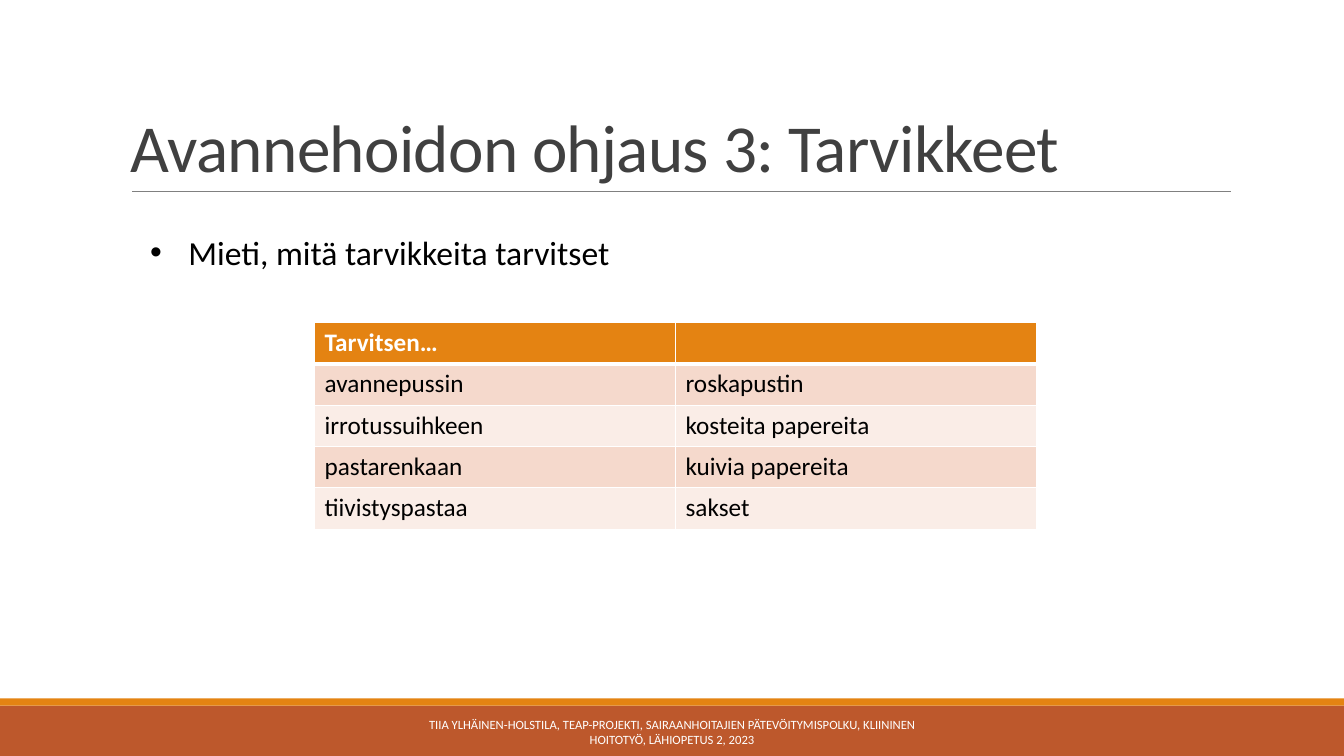
import pptx
import pptx.dml.color
import pptx.enum.shapes
import pptx.enum.text
import pptx.oxml
import pptx.oxml.ns
import pptx.util
from lxml import etree
from pptx.util import Inches

TITLE = "Avannehoidon ohjaus 3: Tarvikkeet"
PROMPT = "Mieti, mitä tarvikkeita tarvitset"
SUPPLIES = [
    ("Tarvitsen…", ""),
    ("avannepussin", "roskapustin"),
    ("irrotussuihkeen", "kosteita papereita"),
    ("pastarenkaan", "kuivia papereita"),
    ("tiivistyspastaa", "sakset"),
]
FOOTER = ("TIIA YLHÄINEN-HOLSTILA, TEAP-PROJEKTI, SAIRAANHOITAJIEN PÄTEVÖITYMISPOLKU, "
          "KLIININEN HOITOTYÖ, LÄHIOPETUS 2, 2023")

FONT = "Calibri"
COLORS = {
    "footer band": "BD582C", "accent": "E48312", "rule": "808080", "title": "404040",
    "body": "000000", "white": "FFFFFF", "odd row": "F5D9CC", "even row": "FAEDE7",
}
SLIDE_WIDTH, SLIDE_HEIGHT = 13.33, 7.5
BANDS = [("footer band", 7, 0.5), ("accent", 6.93, 0.07)]
TABLE_LEFT, TABLE_TOP, COLUMN_WIDTH, ROW_HEIGHT = 3.12, 3.2, 3.58, 0.41

ANCHOR = pptx.enum.text.MSO_ANCHOR
ALIGN = pptx.enum.text.PP_ALIGN


def color(name):
    return pptx.dml.color.RGBColor.from_string(COLORS[name])


def paint(target, name):
    target.fill.solid()
    target.fill.fore_color.rgb = color(name)


def write(paragraph, text, size, name, bold=False):
    paragraph.text = text
    paragraph.font.name = FONT
    paragraph.font.size = pptx.util.Pt(size)
    paragraph.font.bold = bold
    paragraph.font.color.rgb = color(name)


def add_text(slide, box, text, size, name, anchor=ANCHOR.TOP):
    frame = slide.shapes.add_textbox(*map(Inches, box)).text_frame
    frame.word_wrap = True
    frame.vertical_anchor = anchor
    paragraph = frame.paragraphs[0]
    write(paragraph, text, size, name)
    return paragraph


def add_borders(cell, bottom):
    properties = cell._tc.get_or_add_tcPr()
    for side, points in (("L", 1), ("R", 1), ("T", 1), ("B", bottom)):
        properties.append(pptx.oxml.parse_xml(
            f'<a:ln{side} {pptx.oxml.ns.nsdecls("a")} w="{pptx.util.Pt(points)}"><a:solidFill>'
            f'<a:srgbClr val="{COLORS["white"]}"/></a:solidFill></a:ln{side}>'))


def add_supplies(slide):
    columns = len(SUPPLIES[0])
    table = slide.shapes.add_table(
        len(SUPPLIES), columns, Inches(TABLE_LEFT), Inches(TABLE_TOP),
        Inches(COLUMN_WIDTH * columns), Inches(ROW_HEIGHT * len(SUPPLIES))).table
    for row, supplies in enumerate(SUPPLIES):
        header = row == 0
        fill = "accent" if header else "odd row" if row % 2 else "even row"
        for column, supply in enumerate(supplies):
            cell = table.cell(row, column)
            add_borders(cell, 3 if header else 1)
            paint(cell, fill)
            write(cell.text_frame.paragraphs[0], supply, 18,
                  "white" if header else "body", header)


def main():
    deck = pptx.Presentation()
    deck.slide_width, deck.slide_height = Inches(SLIDE_WIDTH), Inches(SLIDE_HEIGHT)
    slide = deck.slides.add_slide(deck.slide_layouts[6])

    for name, top, height in BANDS:
        band = slide.shapes.add_shape(
            pptx.enum.shapes.MSO_SHAPE.RECTANGLE,
            0, Inches(top), Inches(SLIDE_WIDTH), Inches(height))
        band.shadow.inherit = False
        paint(band, name)
        band.line.fill.background()

    rule = slide.shapes.add_connector(
        pptx.enum.shapes.MSO_CONNECTOR.STRAIGHT,
        Inches(1.31), Inches(1.9), Inches(12.21), Inches(1.9))
    rule.line.color.rgb = color("rule")
    rule.line.width = pptx.util.Pt(0.5)
    etree.SubElement(rule._element.spPr, pptx.oxml.ns.qn("a:effectLst"))

    title = add_text(slide, (1.2, 0.31, 11, 1.59), TITLE, 48, "title", ANCHOR.BOTTOM)
    title.line_spacing = 0.85
    title.runs[0].font._element.set("spc", "-50")

    prompt = add_text(slide, (1.39, 2.25, 9.29, 0.5), PROMPT, 24, "body")
    prompt.space_after = pptx.util.Pt(12)
    bullet = prompt._p.get_or_add_pPr()
    bullet.set("marL", str(Inches(0.38)))
    bullet.set("indent", str(Inches(-0.38)))
    bullet.insert_element_before(pptx.oxml.parse_xml(
        f'<a:buFont {pptx.oxml.ns.nsdecls("a")} typeface="Arial"/>'), "a:defRPr")
    bullet.insert_element_before(pptx.oxml.parse_xml(
        f'<a:buChar {pptx.oxml.ns.nsdecls("a")} char="•"/>'), "a:defRPr")

    footer = add_text(slide, (4.03, 7.06, 5.27, 0.4), FOOTER, 9, "white", ANCHOR.MIDDLE)
    footer.alignment = ALIGN.CENTER

    add_supplies(slide)
    deck.save("out.pptx")


if __name__ == "__main__":
    main()
